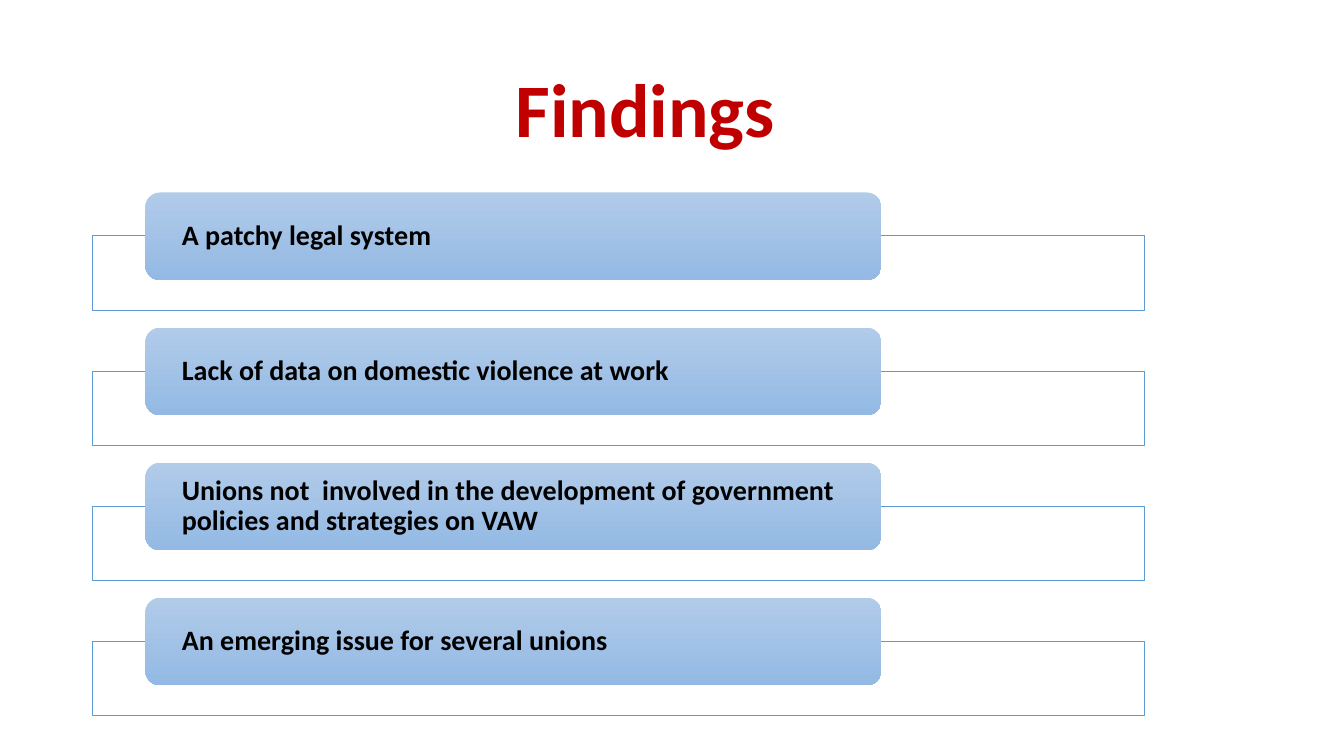
from pptx import Presentation
from pptx.dml.color import RGBColor
from pptx.enum.shapes import MSO_SHAPE
from pptx.enum.text import MSO_ANCHOR, PP_ALIGN
from pptx.util import Inches, Pt
from lxml import etree

RED = RGBColor(0xC0, 0x00, 0x00)
BLUE = RGBColor(0x5B, 0x9B, 0xD5)
LIGHT_BLUE = RGBColor(0xB1, 0xCB, 0xE9)
MID_BLUE = RGBColor(0x93, 0xB9, 0xE4)
WHITE = RGBColor(0xFF, 0xFF, 0xFF)
BLACK = RGBColor(0x00, 0x00, 0x00)

FINDINGS = [
    "A patchy legal system",
    "Lack of data on domestic violence at work",
    "Unions not  involved in the development of government policies and strategies on VAW",
    "An emerging issue for several unions",
]

# Grid: one row per finding
LEFT, TOP, PITCH = 0.92, 1.91, 1.34
FRAME_W, FRAME_H, FRAME_DROP = 10.43, 0.74, 0.43
LABEL_W, LABEL_H = FRAME_W * 0.7, 0.87
LABEL_LEFT = LEFT + FRAME_W * 0.05

prs = Presentation()
prs.slide_width, prs.slide_height = Inches(13.33), Inches(7.5)
s = prs.slides.add_slide(prs.slide_layouts[5])


def write(tf, text, size, color, align):
    tf.word_wrap = True
    tf.vertical_anchor = MSO_ANCHOR.MIDDLE
    p = tf.paragraphs[0]
    p.alignment = align
    p.line_spacing = 0.9
    r = p.add_run()
    r.text = text
    r.font.name = "Calibri"
    r.font.size = Pt(size)
    r.font.bold = True
    r.font.color.rgb = color


# Title, set slightly left of centre by a wider right margin
title = s.shapes.title
title.left, title.top = Inches(LEFT), Inches(0.4)
title.width, title.height = Inches(11.5), Inches(1.45)
title.text_frame.margin_right = Inches(0.64)
write(title.text_frame, "Findings", 54, RED, PP_ALIGN.CENTER)

for row, finding in enumerate(FINDINGS):
    y = TOP + row * PITCH

    # Outlined frame behind the label
    frame = s.shapes.add_shape(MSO_SHAPE.RECTANGLE, Inches(LEFT), Inches(y + FRAME_DROP),
                               Inches(FRAME_W), Inches(FRAME_H))
    frame.shadow.inherit = False
    frame.fill.solid()
    frame.fill.fore_color.rgb = WHITE
    color = frame.fill._xPr.solidFill[0]
    etree.SubElement(color, color.tag.replace("srgbClr", "alpha"), val="90000")
    frame.line.color.rgb = BLUE
    frame.line.width = Pt(0.5)

    # Rounded label with its finding
    label = s.shapes.add_shape(MSO_SHAPE.ROUNDED_RECTANGLE, Inches(LABEL_LEFT), Inches(y),
                               Inches(LABEL_W), Inches(LABEL_H))
    label.shadow.inherit = False
    label.fill.gradient()
    label.fill.gradient_angle = 270
    for stop, shade in zip(label.fill.gradient_stops, (LIGHT_BLUE, MID_BLUE)):
        stop.color.rgb = shade
    label.line.fill.background()
    tf = label.text_frame
    tf.margin_left = tf.margin_right = Inches(0.32)
    tf.margin_top = tf.margin_bottom = 0
    write(tf, finding, 20, BLACK, PP_ALIGN.LEFT)

prs.save("out.pptx")
